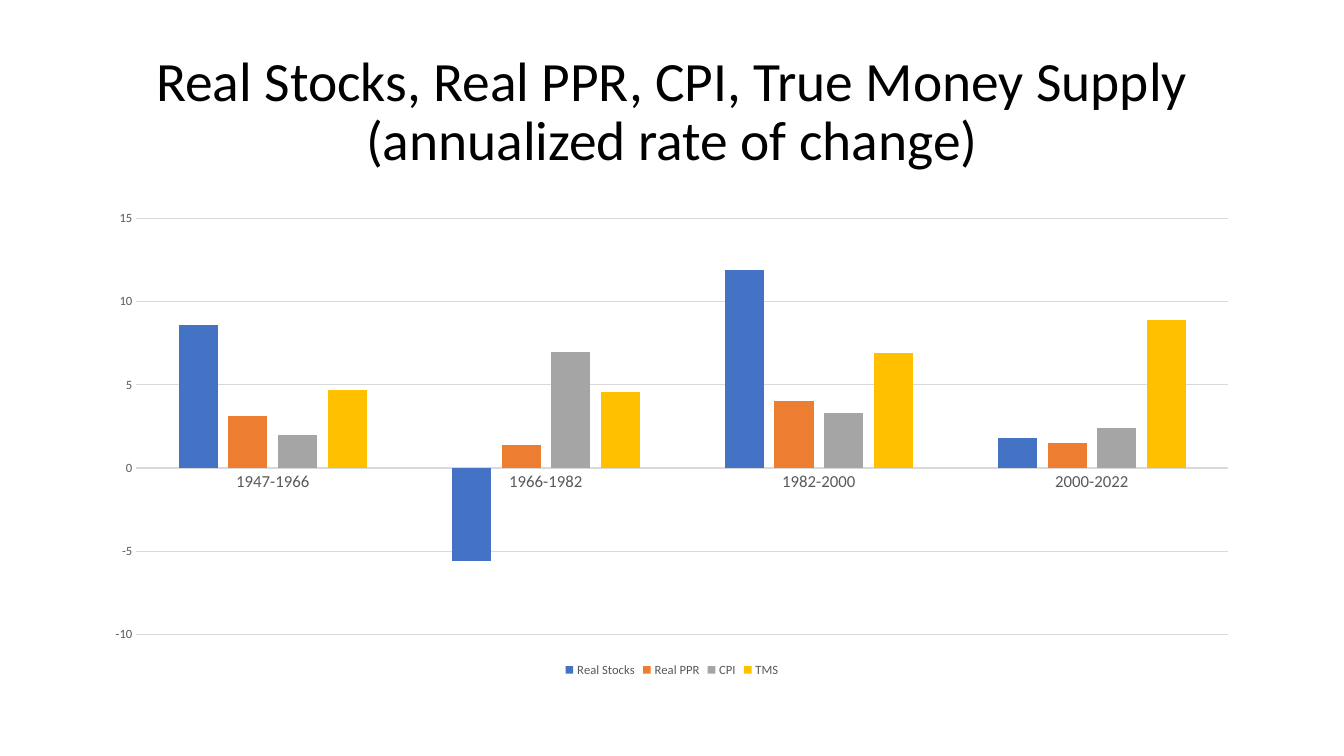
"""Build a slide comparing annualized rates of change across four periods."""
from dataclasses import dataclass

from pptx import Presentation
from pptx.chart.data import CategoryChartData
from pptx.dml.color import RGBColor
from pptx.enum.chart import XL_CHART_TYPE, XL_LEGEND_POSITION, XL_TICK_MARK
from pptx.enum.text import MSO_ANCHOR, PP_ALIGN
from pptx.util import Cm, Pt

CLUSTERED = XL_CHART_TYPE.COLUMN_CLUSTERED
BOTTOM = XL_LEGEND_POSITION.BOTTOM
NO_TICK = XL_TICK_MARK.NONE
MIDDLE = MSO_ANCHOR.MIDDLE
CENTER = PP_ALIGN.CENTER

TITLE = "Real Stocks, Real PPR, CPI, True Money Supply\v(annualized rate of change)"
PERIODS = ("1947-1966", "1966-1982", "1982-2000", "2000-2022")
RATES = {
    "Real Stocks": (8.6, -5.6, 11.9, 1.8),
    "Real PPR": (3.1, 1.4, 4, 1.5),
    "CPI": (2, 7, 3.3, 2.4),
    "TMS": (4.7, 4.6, 6.9, 8.9),
}


@dataclass(frozen=True)
class Theme:
    """Fonts, type sizes and colours of the slide."""
    font: str = "Calibri"
    title_size: float = 39.6
    base_size: float = 10
    category_size: float = 12
    small_size: float = 9
    text: str = "000000"
    muted: str = "595959"
    rule: str = "D9D9D9"
    series: tuple = ("4472C4", "ED7D31", "A5A5A5", "FFC000")


def apply(target, values):
    """Set each attribute named in values on the target."""
    for name, value in values.items():
        setattr(target, name, value)


class SlideBuilder:
    """Adds styled elements to the current slide."""

    def __init__(self, slide, theme):
        """Keep the slide and its theme."""
        self.s = slide
        self.theme = theme

    def style_font(self, font, size, color):
        """Apply the theme font in a given size and colour."""
        apply(font, {"name": self.theme.font, "size": Pt(size), "bold": False})
        font.color.rgb = RGBColor.from_string(color)

    def style_rule(self, line):
        """Draw a line as a thin light rule."""
        line.width = Pt(0.75)
        line.color.rgb = RGBColor.from_string(self.theme.rule)

    def title(self, text, box):
        """Add a centred title."""
        tf = self.s.shapes.add_textbox(*box).text_frame
        apply(tf, {"word_wrap": True, "vertical_anchor": MIDDLE, "text": text})
        p = tf.paragraphs[0]
        apply(p, {"alignment": CENTER, "line_spacing": 0.9})
        for r in p.runs:
            self.style_font(r.font, self.theme.title_size, self.theme.text)

    def column_chart(self, categories, series, box):
        """Add a clustered column chart with a legend below."""
        t = self.theme
        data = CategoryChartData()
        data.categories = categories
        for name, values in series.items():
            data.add_series(name, values)
        chart = self.s.shapes.add_chart(CLUSTERED, *box, data).chart
        apply(chart, {"has_title": False, "has_legend": True})
        self.style_font(chart.font, t.base_size, t.text)
        apply(chart.legend, {"position": BOTTOM, "include_in_layout": False})
        self.style_font(chart.legend.font, t.small_size, t.muted)

        plot = chart.plots[0]
        apply(plot, {"gap_width": 219, "overlap": -27, "vary_by_categories": False})
        for bars, color in zip(plot.series, t.series):
            bars.invert_if_negative = False
            bars.format.fill.solid()
            bars.format.fill.fore_color.rgb = RGBColor.from_string(color)

        ticks = {"major_tick_mark": NO_TICK, "minor_tick_mark": NO_TICK}
        rates, periods = chart.value_axis, chart.category_axis
        for axis, size in ((rates, t.small_size), (periods, t.category_size)):
            apply(axis, ticks)
            self.style_font(axis.tick_labels.font, size, t.muted)
        apply(rates, {"minimum_scale": -10, "maximum_scale": 15, "major_unit": 5})
        rates.format.line.fill.background()
        self.style_rule(rates.major_gridlines.format.line)
        self.style_rule(periods.format.line)


def main():
    """Create and save the presentation."""
    prs = Presentation()
    apply(prs, {"slide_width": Cm(33.87), "slide_height": Cm(19.05)})
    builder = SlideBuilder(prs.slides.add_slide(prs.slide_layouts[6]), Theme())
    left, width = Cm(2.33), Cm(29.21)
    builder.title(TITLE, (left, Cm(1.01), width, Cm(3.68)))
    builder.column_chart(PERIODS, RATES, (left, Cm(5.08), width, Cm(12.09)))
    prs.save("out.pptx")


if __name__ == "__main__":
    main()
